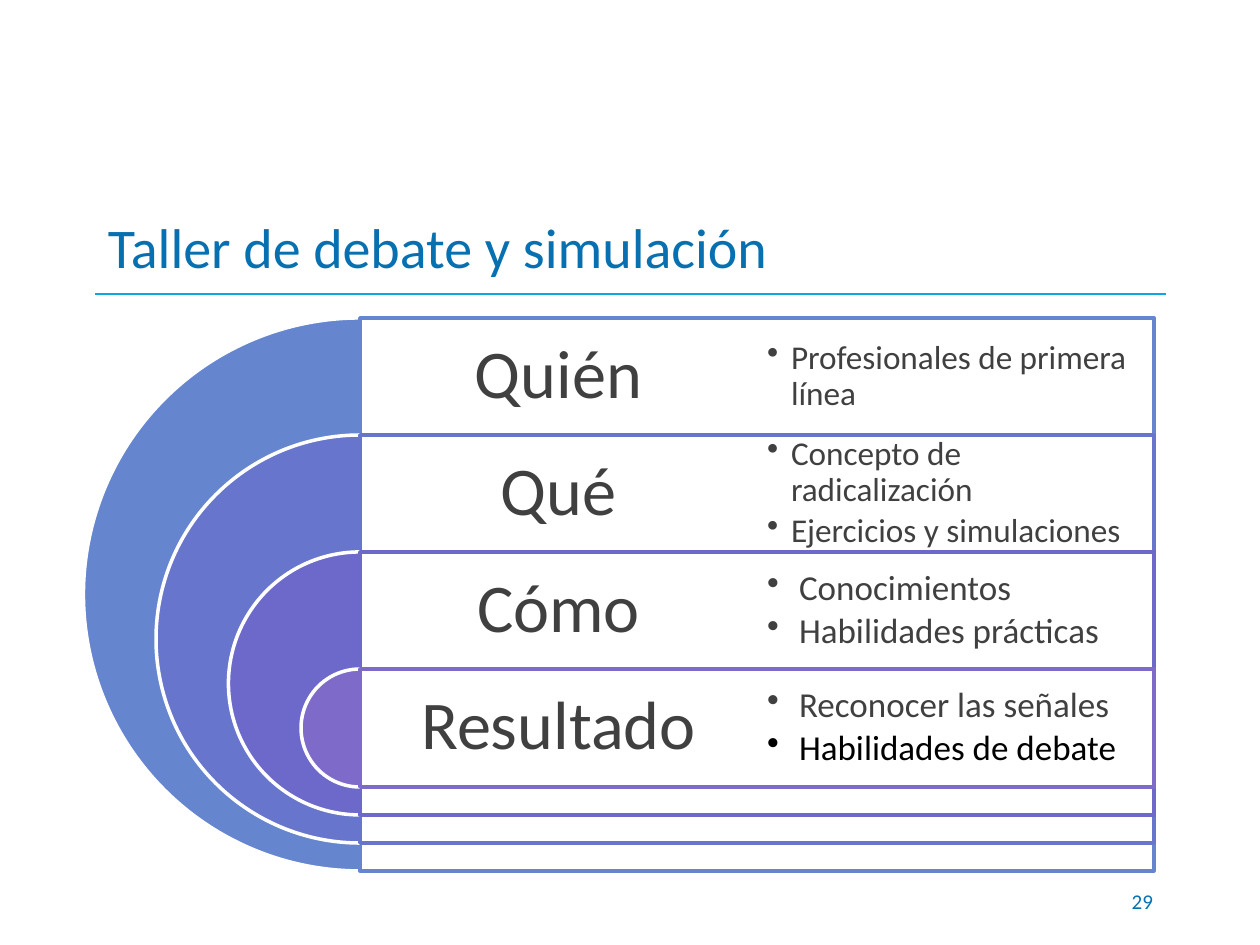
import pptx
import pptx.util
import pptx.dml.color
import pptx.enum.shapes
import pptx.enum.text
import pptx.oxml
import pptx.oxml.ns
from dataclasses import dataclass
from lxml import etree

SCALE = 914400 // 126  # EMU in one px


@dataclass(frozen=True)
class Theme:
    font: str = "Calibri"
    blue: str = "0770B1"
    rule: str = "0BA7DF"
    grey: str = "404040"
    black: str = "000000"
    white: str = "FFFFFF"
    rings: tuple = ("6585CF", "6775CD", "6C69CB", "7E6BC9")
    title: int = 32
    head: int = 39
    small: int = 19
    body: int = 20
    page: int = 12


THEME = Theme()
ALIGN = pptx.enum.text.PP_ALIGN
SHAPE = pptx.enum.shapes.MSO_SHAPE

# Label, text size, bullet indent, points with their colours
ROWS = [
    ("Quién", THEME.small, 24, [("Profesionales de primera línea", THEME.grey)]),
    ("Qué", THEME.small, 24, [("Concepto de radicalización", THEME.grey),
                              ("Ejercicios y simulaciones", THEME.grey)]),
    ("Cómo", THEME.body, 32, [("Conocimientos", THEME.grey),
                              ("Habilidades prácticas", THEME.grey)]),
    ("Resultado", THEME.body, 32, [("Reconocer las señales", THEME.grey),
                                   ("Habilidades de debate", THEME.black)]),
]
MID, TOP, STEP = 360, 318, 117  # flat edge of the rings, first row, row height
WIDE, SHRINK = 553, 145         # outer ring, change from ring to ring
COL = 397                       # width of one text column


def px(num):
    return pptx.util.Emu(round(num * SCALE))


def rgb(code):
    return pptx.dml.color.RGBColor.from_string(code)


def add_mark(para, indent):
    """Give a paragraph a round bullet with a hanging indent."""
    props = para._p.get_or_add_pPr()
    props.set("marL", str(px(indent)))
    props.set("indent", str(-px(indent)))
    mark = etree.SubElement(props, pptx.oxml.ns.qn("a:buChar"))
    mark.set("char", "•")


def add_text(slide, box, lines, size, align=ALIGN.LEFT, inset=(13, 6),
             indent=0, lead=None, after=0):
    """Write (text, colour) lines, one paragraph each."""
    frame = slide.shapes.add_textbox(*map(px, box)).text_frame
    frame.word_wrap = True
    frame.vertical_anchor = pptx.enum.text.MSO_ANCHOR.MIDDLE
    frame.margin_left = frame.margin_right = px(inset[0])
    frame.margin_top = frame.margin_bottom = px(inset[1])
    for i, (text, color) in enumerate(lines):
        para = frame.add_paragraph() if i else frame.paragraphs[0]
        if indent:
            add_mark(para, indent)
        para.alignment = align
        para.space_after = pptx.util.Pt(after)
        if lead:
            para.line_spacing = lead
        run = para.add_run()
        run.text = text
        run.font.name = THEME.font
        run.font.size = pptx.util.Pt(size)
        run.font.color.rgb = rgb(color)


def add_form(slide, kind, box, fill, line):
    form = slide.shapes.add_shape(kind, *map(px, box))
    form.shadow.inherit = False
    form.fill.solid()
    form.fill.fore_color.rgb = rgb(fill)
    form.line.color.rgb = rgb(line)
    form.line.width = pptx.util.Pt(2)
    return form


def fade(form, share):
    """Set the opacity of a solid fill, in percent."""
    color = form.fill._xPr.find(".//" + pptx.oxml.ns.qn("a:srgbClr"))
    alpha = etree.SubElement(color, pptx.oxml.ns.qn("a:alpha"))
    alpha.set("val", str(share * 1000))


def add_rule(slide, left, right, y):
    rule = slide.shapes.add_connector(
        pptx.enum.shapes.MSO_CONNECTOR.STRAIGHT, px(left), px(y), px(right), px(y))
    rule.line.color.rgb = rgb(THEME.rule)
    rule.line.width = pptx.util.Pt(0.75)
    etree.SubElement(rule._element.spPr, pptx.oxml.ns.qn("a:effectLst"))


def add_ring(slide, i, color):
    """Draw a half disc and the frame to its right."""
    top, size = TOP + i * STEP, WIDE - i * SHRINK
    disc = add_form(slide, SHAPE.PIE, (MID - size / 2, top, size, size),
                    color, THEME.white)
    disc.adjustments[0], disc.adjustments[1] = 54, 162  # 90 to 270 degrees
    frame = add_form(slide, SHAPE.RECTANGLE, (MID, top, 2 * COL, size),
                     THEME.white, color)
    fade(frame, 90)


def add_row(slide, i, label, size, indent, points):
    top = TOP + i * STEP
    add_text(slide, (MID, top, COL, STEP), [(label, THEME.grey)], THEME.head,
             align=ALIGN.CENTER, inset=(20, 20), lead=0.9)
    add_text(slide, (MID + COL, top, COL, STEP), points, size,
             inset=(10, 10), indent=indent, lead=0.9, after=3)


def main():
    deck = pptx.Presentation()
    deck.slide_width, deck.slide_height = px(1260), px(945)
    slide = deck.slides.add_slide(deck.slide_layouts[6])

    # Title and rule
    add_rule(slide, 95, 1166, 294)
    add_text(slide, (95, 199, 1071, 95), [("Taller de debate y simulación", THEME.blue)],
             THEME.title)

    # Nested rings with their rows
    for i, (color, row) in enumerate(zip(THEME.rings, ROWS)):
        add_ring(slide, i, color)
        add_row(slide, i, *row)

    # Page number
    add_text(slide, (904, 876, 262, 50), [("29", THEME.blue)], THEME.page,
             align=ALIGN.RIGHT)
    deck.save("out.pptx")


if __name__ == "__main__":
    main()
